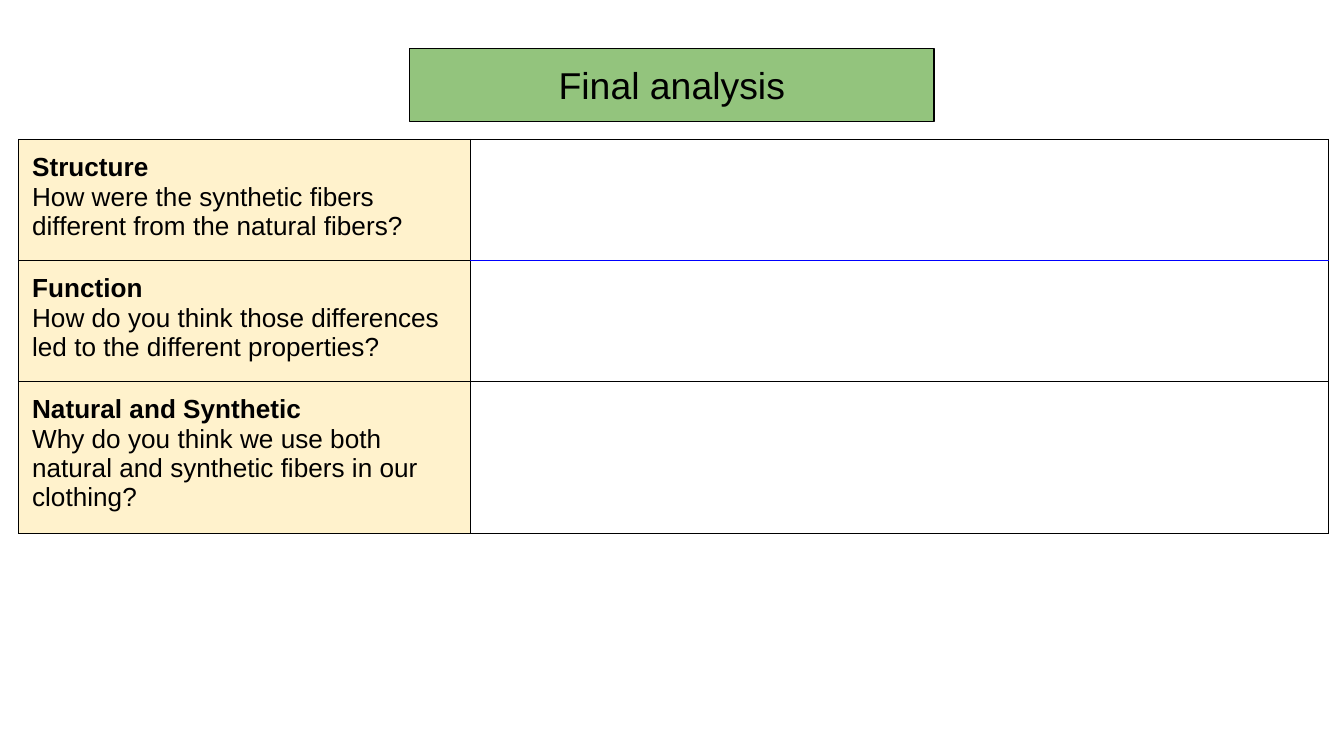
from dataclasses import dataclass

from lxml import etree
from pptx import Presentation
from pptx import util as u
from pptx.dml import color
from pptx.enum import text
from pptx.oxml import ns


@dataclass(frozen=True)
class Theme:
    font: str = "Arial"
    title_size: float = 20
    body_size: float = 14
    ink: str = "000000"
    accent: str = "0000FF"
    title_fill: str = "93C47D"
    prompt_fill: str = "FFF2CC"
    line_width: float = 0.75
    inset: float = 7.2


@dataclass(frozen=True)
class Prompt:
    heading: str
    question: str
    height: float


THEME = Theme()
TITLE_BOX = (219.5, 26, 281, 39)
TABLE_ORIGIN = (10, 74.75)
COLUMN_WIDTHS = (242, 459.5)
PROMPTS = (
    Prompt("Structure", "How were the synthetic fibers different from the natural fibers?", 64.8),
    Prompt("Function", "How do you think those differences led to the different properties?", 64.8),
    Prompt("Natural and Synthetic",
           "Why do you think we use both natural and synthetic fibers in our clothing?", 81.5),
)


def rgb(value: str) -> color.RGBColor:
    return color.RGBColor.from_string(value)


def add_run(paragraph, words: str, size: float, bold: bool = False) -> None:
    run = paragraph.add_run()
    run.text = words
    run.font.name = THEME.font
    run.font.size = u.Pt(size)
    run.font.bold = bold
    run.font.color.rgb = rgb(THEME.ink)


def set_margins(holder) -> None:
    for side in ("left", "top", "right", "bottom"):
        setattr(holder, f"margin_{side}", u.Pt(THEME.inset))


def set_borders(cell, **colors: str) -> None:
    """Draw all four cell borders in ink, except sides given another colour."""
    properties = cell._tc.get_or_add_tcPr()
    for side in "LRTB":
        line = etree.SubElement(properties, ns.qn(f"a:ln{side}"), w=str(u.Pt(THEME.line_width)))
        fill = etree.SubElement(line, ns.qn("a:solidFill"))
        etree.SubElement(fill, ns.qn("a:srgbClr"), val=colors.get(side, THEME.ink))


def add_title(slide, words: str) -> None:
    title = slide.shapes.title
    title.left, title.top, title.width, title.height = map(u.Pt, TITLE_BOX)
    title.fill.solid()
    title.fill.fore_color.rgb = rgb(THEME.title_fill)
    title.line.color.rgb = rgb(THEME.ink)
    title.line.width = u.Pt(THEME.line_width)
    frame = title.text_frame
    set_margins(frame)
    frame.word_wrap = True
    frame.auto_size = text.MSO_AUTO_SIZE.NONE
    frame.vertical_anchor = text.MSO_ANCHOR.MIDDLE
    paragraph = frame.paragraphs[0]
    paragraph.alignment = text.PP_ALIGN.CENTER
    add_run(paragraph, words, THEME.title_size)


def fill_prompt(cell, prompt: Prompt) -> None:
    cell.fill.solid()
    cell.fill.fore_color.rgb = rgb(THEME.prompt_fill)
    frame = cell.text_frame
    add_run(frame.paragraphs[0], prompt.heading, THEME.body_size, bold=True)
    add_run(frame.add_paragraph(), prompt.question, THEME.body_size)


def add_prompt_table(slide, prompts: tuple[Prompt, ...]) -> None:
    size = (sum(COLUMN_WIDTHS), sum(prompt.height for prompt in prompts))
    table = slide.shapes.add_table(len(prompts), len(COLUMN_WIDTHS),
                                   *map(u.Pt, TABLE_ORIGIN + size)).table
    table.first_row = table.horz_banding = False
    for column, width in zip(table.columns, COLUMN_WIDTHS):
        column.width = u.Pt(width)
    for index, (row, prompt) in enumerate(zip(table.rows, prompts)):
        row.height = u.Pt(prompt.height)
        question, answer = row.cells
        for cell in (question, answer):
            set_margins(cell)
        # The line between the first two answers is accented
        accents = {0: {"B": THEME.accent}, 1: {"T": THEME.accent}}
        set_borders(question)
        set_borders(answer, **accents.get(index, {}))
        fill_prompt(question, prompt)
        answer.fill.background()


def main() -> None:
    presentation = Presentation()
    presentation.slide_width, presentation.slide_height = u.Pt(720), u.Pt(405)
    slide = presentation.slides.add_slide(presentation.slide_layouts[5])
    # Title banner
    add_title(slide, "Final analysis")
    # Prompts with room for answers
    add_prompt_table(slide, PROMPTS)
    presentation.save("out.pptx")


if __name__ == "__main__":
    main()
